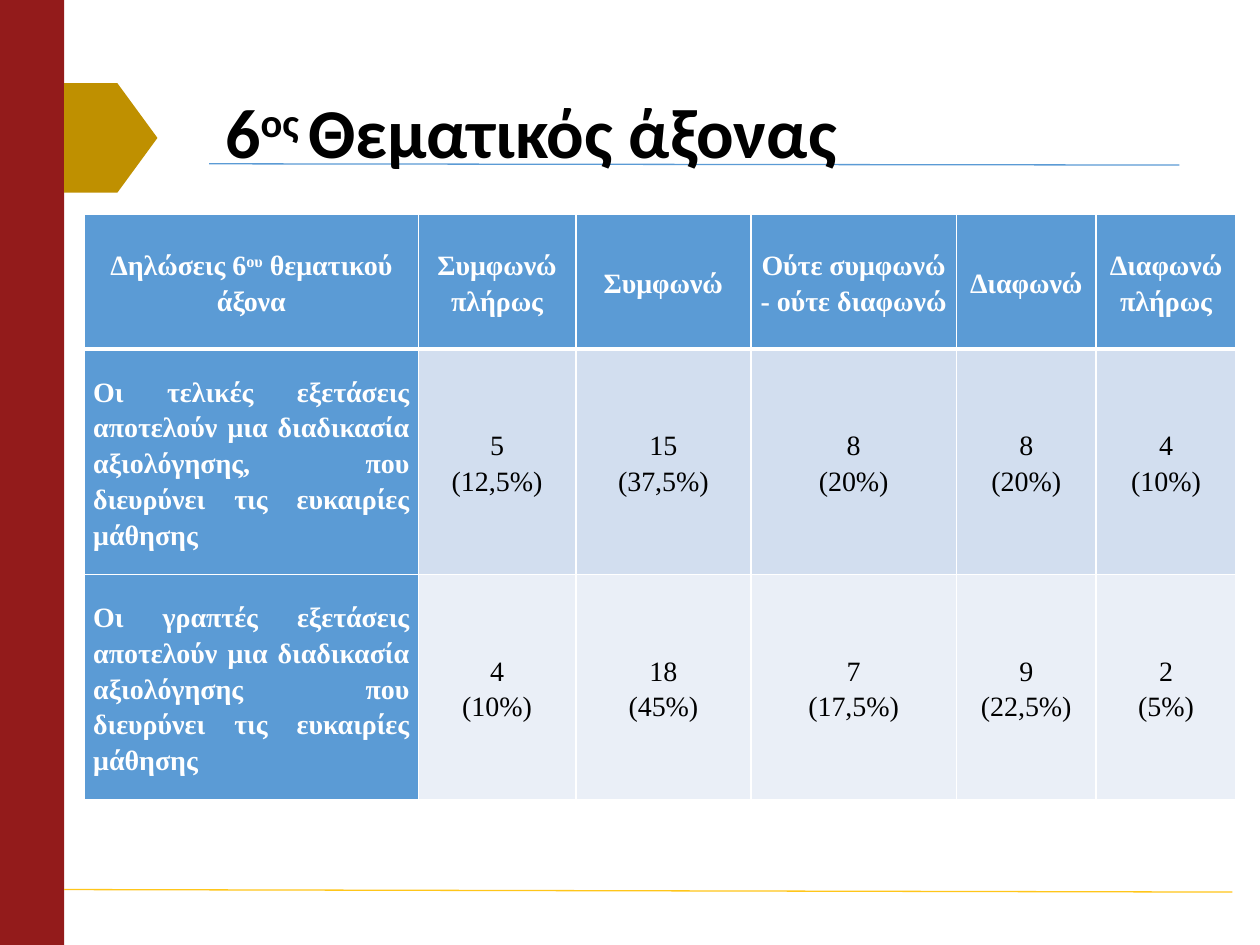
from dataclasses import dataclass

from lxml import etree
from pptx import Presentation
from pptx.dml.color import RGBColor
from pptx.enum.shapes import MSO_CONNECTOR, MSO_SHAPE
from pptx.enum.text import MSO_ANCHOR, PP_ALIGN
from pptx.oxml.ns import qn
from pptx.util import Pt

RECT, PENTAGON = MSO_SHAPE.RECTANGLE, MSO_SHAPE.PENTAGON
STRAIGHT = MSO_CONNECTOR.STRAIGHT
MIDDLE = MSO_ANCHOR.MIDDLE
LEFT, CENTER, JUSTIFY = PP_ALIGN.LEFT, PP_ALIGN.CENTER, PP_ALIGN.JUSTIFY
PX = 9144


@dataclass(frozen=True)
class Theme:
    red: str = "931B1B"
    ochre: str = "BF9000"
    gold: str = "FFC61A"
    blue: str = "5B9BD5"
    bands: tuple = ("D2DEEF", "EAEFF7")
    white: str = "FFFFFF"
    black: str = "000000"
    title_font: str = "Calibri"
    table_font: str = "Times New Roman"
    title_size: int = 40
    table_size: int = 16


def px(*values):
    return [v * PX for v in values]


def apply(obj, values):
    for name, value in values.items():
        setattr(obj, name, value)


class Deck:
    def __init__(self, theme, width, height):
        self.theme = theme
        self.prs = Presentation()
        self.prs.slide_width, self.prs.slide_height = px(width, height)
        self.s = self.prs.slides.add_slide(self.prs.slide_layouts[6])

    def shape(self, kind, box, color, adjust=None):
        sp = self.s.shapes.add_shape(kind, *px(*box))
        sp.shadow.inherit = False
        sp.fill.solid()
        sp.fill.fore_color.rgb = RGBColor.from_string(color)
        sp.line.fill.background()
        if adjust is not None:
            sp.adjustments[0] = adjust

    def line(self, ends, color):
        sp = self.s.shapes.add_connector(STRAIGHT, *px(*ends))
        sp.line.color.rgb = RGBColor.from_string(color)
        sp.line.width = Pt(0.75)
        etree.SubElement(sp._element.spPr, qn("a:effectLst"))

    def text(self, tf, paragraphs, para, font, color):
        for i, runs in enumerate(paragraphs):
            p = tf.add_paragraph() if i else tf.paragraphs[0]
            apply(p, para)
            for words, raised in runs:
                r = p.add_run()
                r.text = words
                apply(r.font, font)
                r.font.color.rgb = RGBColor.from_string(color)
                if raised:
                    r.font._element.set("baseline", "30000")

    def title(self, box, runs):
        t = self.theme
        tf = self.s.shapes.add_textbox(*px(*box)).text_frame
        apply(tf, {"word_wrap": True, "vertical_anchor": MIDDLE})
        font = {"name": t.title_font, "size": Pt(t.title_size), "bold": True}
        self.text(tf, [runs], {"alignment": LEFT, "line_spacing": 0.9}, font, t.black)

    def border(self, side, points):
        ln = etree.Element(qn(f"a:ln{side}"), w=str(Pt(points)))
        fill = etree.SubElement(ln, qn("a:solidFill"))
        etree.SubElement(fill, qn("a:srgbClr"), val=self.theme.white)
        return ln

    def cell(self, cell, paragraphs, row, col):
        t = self.theme
        head = row == 0 or col == 0
        apply(cell, {"vertical_anchor": MIDDLE, "margin_left": 7 * PX,
                     "margin_right": 7 * PX, "margin_top": 0, "margin_bottom": 0})
        cell.fill.solid()
        color = t.blue if head else t.bands[(row - 1) % 2]
        cell.fill.fore_color.rgb = RGBColor.from_string(color)
        widths = {"L": 1, "R": 1, "T": 3 if row == 1 else 1, "B": 1 if row else 3}
        tc_pr = cell._tc.get_or_add_tcPr()
        for i, (side, points) in enumerate(widths.items()):
            tc_pr.insert(i, self.border(side, points))
        align = JUSTIFY if row and col == 0 else CENTER
        font = {"name": t.table_font, "size": Pt(t.table_size), "bold": head}
        self.text(cell.text_frame, paragraphs,
                  {"alignment": align, "line_spacing": 1.15},
                  font, t.white if head else t.black)

    def table(self, left, top, widths, heights, rows):
        box = px(left, top, sum(widths), sum(heights))
        table = self.s.shapes.add_table(len(heights), len(widths), *box).table
        for column, width in zip(table.columns, widths):
            column.width = width * PX
        for line, height in zip(table.rows, heights):
            line.height = height * PX
        for i, row in enumerate(rows):
            for j, paragraphs in enumerate(row):
                self.cell(table.cell(i, j), paragraphs, i, j)


def plain(*lines):
    return [[(words, False)] for words in lines]


HEADINGS = ["Συμφωνώ πλήρως", "Συμφωνώ", "Ούτε συμφωνώ - ούτε διαφωνώ",
            "Διαφωνώ", "Διαφωνώ πλήρως"]
ANSWERS = {
    "Οι τελικές εξετάσεις αποτελούν μια διαδικασία αξιολόγησης, "
    "που διευρύνει τις ευκαιρίες μάθησης":
        [("5", "12,5"), ("15", "37,5"), ("8", "20"), ("8", "20"), ("4", "10")],
    "Οι γραπτές εξετάσεις αποτελούν μια διαδικασία αξιολόγησης "
    "που διευρύνει τις ευκαιρίες μάθησης":
        [("4", "10"), ("18", "45"), ("7", "17,5"), ("9", "22,5"), ("2", "5")],
}


def main():
    theme = Theme()
    deck = Deck(theme, 1000, 750)
    deck.shape(RECT, (0, 0, 51, 750), theme.red)
    deck.line((166, 130, 936, 131), theme.blue)
    deck.line((51, 706, 978, 708), theme.gold)
    deck.shape(PENTAGON, (51, 66, 74, 87), theme.ochre, 0.43)
    deck.title((169, 76, 850, 63),
               [("6", False), ("ος ", True), ("Θεματικός άξονας", False)])
    corner = [[("Δηλώσεις 6", False), ("ου", True), (" θεματικού άξονα", False)]]
    rows = [[corner] + [plain(h) for h in HEADINGS]]
    for statement, answers in ANSWERS.items():
        rows.append([plain(statement)]
                    + [plain(n, f"({share}%)") for n, share in answers])
    deck.table(67, 170, (265, 125, 139, 163, 111, 111), (107, 179, 179), rows)
    deck.prs.save("out.pptx")


if __name__ == "__main__":
    main()
